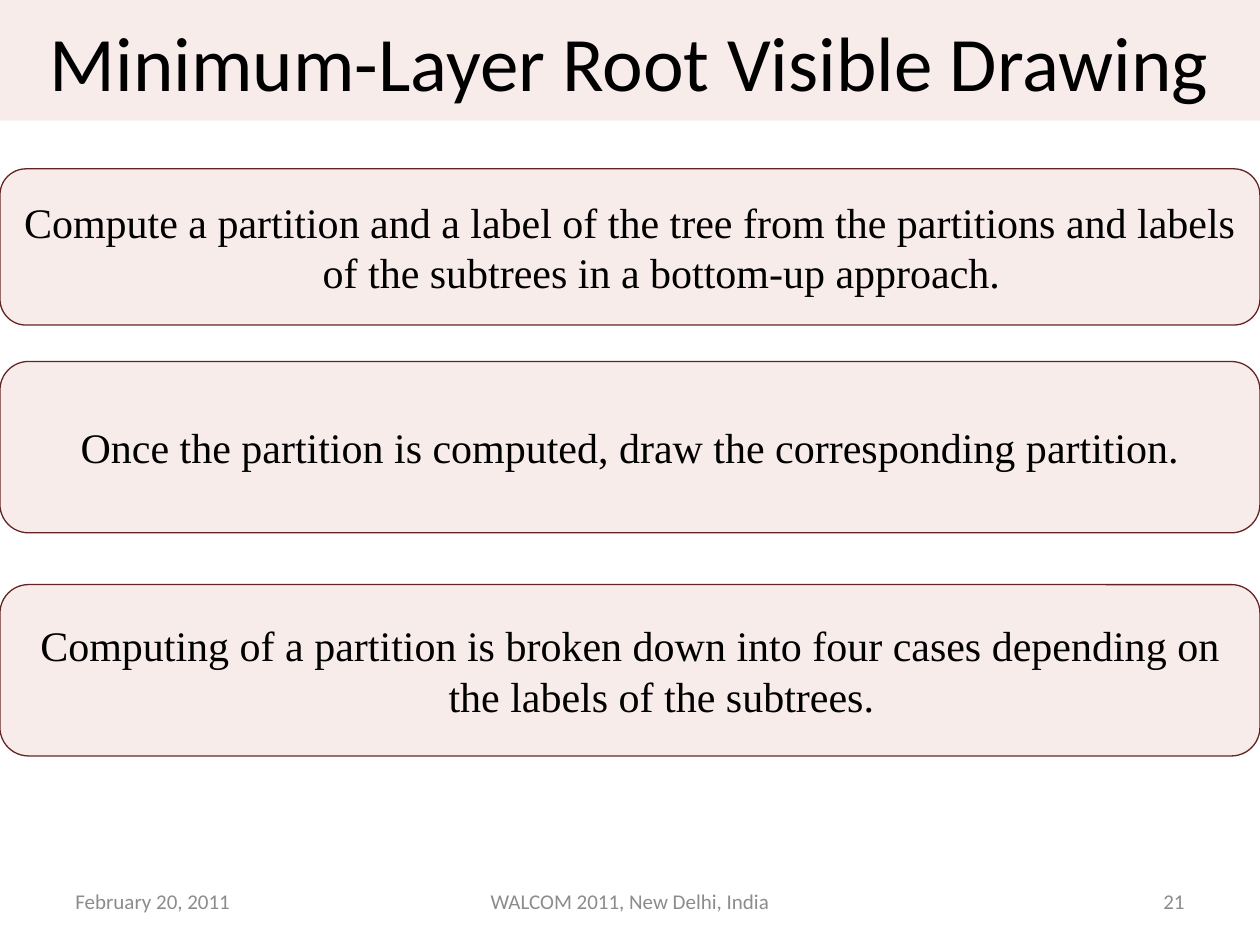
from dataclasses import dataclass

from lxml import etree
from pptx import Presentation
from pptx.dml.color import RGBColor
from pptx.enum.shapes import MSO_SHAPE
from pptx.enum.text import MSO_ANCHOR, PP_ALIGN
from pptx.oxml.ns import qn
from pptx.util import Pt

RECT, ROUND = MSO_SHAPE.RECTANGLE, MSO_SHAPE.ROUNDED_RECTANGLE
LEFT, MID, RIGHT = PP_ALIGN.LEFT, PP_ALIGN.CENTER, PP_ALIGN.RIGHT
CENTRE = MSO_ANCHOR.MIDDLE
COLOURS = {"panel": "E6B9B8", "edge": "632523", "ink": "000000", "foot": "8C8C8C"}
WIDE, HIGH = 720, 540
OPAQUE = 27
HANG = 36


@dataclass
class Panel:
    top: float
    high: float
    text: str


@dataclass
class Foot:
    left: float
    wide: float
    align: PP_ALIGN
    text: str


PANELS = [
    Panel(96.5, 89.3, "Compute a partition and a label of the tree from the partitions "
          "and labels of the subtrees in a bottom-up approach."),
    Panel(206.6, 97.9, "Once the partition is computed, draw the corresponding partition."),
    Panel(334.1, 97.9, "Computing of a partition is broken down into four cases depending "
          "on the labels of the subtrees."),
]
FEET = [
    Foot(36, 168, LEFT, "February 20, 2011"),
    Foot(246, 228, MID, "WALCOM 2011, New Delhi, India"),
    Foot(516, 168, RIGHT, "21"),
]


def tint(name: str) -> RGBColor:
    return RGBColor.from_string(COLOURS[name])


def write(shape, text: str, *, size: float, font: str = "Calibri",
          ink: str = "ink", align: PP_ALIGN = MID, hang: float = 0) -> None:
    frame = shape.text_frame
    frame.word_wrap = True
    frame.vertical_anchor = CENTRE
    para = frame.paragraphs[0]
    para.alignment = align
    if hang:
        props = para._p.get_or_add_pPr()
        props.set("marL", str(Pt(hang)))
        props.set("indent", str(-Pt(hang)))
    run = para.add_run()
    run.text = text
    run.font.name = font
    run.font.size = Pt(size)
    run.font.color.rgb = tint(ink)


def add_box(slide, kind: MSO_SHAPE, top: float, high: float, edge: str = ""):
    box = slide.shapes.add_shape(kind, Pt(0), Pt(top), Pt(WIDE), Pt(high))
    box.shadow.inherit = False
    box.fill.solid()
    box.fill.fore_color.rgb = tint("panel")
    shade = box._element.spPr.find(qn("a:solidFill"))[0]
    etree.SubElement(shade, qn("a:alpha")).set("val", str(OPAQUE * 1000))
    if edge:
        box.line.color.rgb = tint(edge)
        box.line.width = Pt(0.75)
    else:
        box.line.fill.background()
    return box


def add_foot(slide, foot: Foot) -> None:
    box = slide.shapes.add_textbox(Pt(foot.left), Pt(500.5), Pt(foot.wide), Pt(28.75))
    write(box, foot.text, size=12, ink="foot", align=foot.align)


def main() -> None:
    """Build the slide on minimum-layer root visible drawing."""
    deck = Presentation()
    deck.slide_width, deck.slide_height = Pt(WIDE), Pt(HIGH)
    slide = deck.slides.add_slide(deck.slide_layouts[6])
    for foot in FEET:
        add_foot(slide, foot)
    title = add_box(slide, RECT, 0, 69)
    write(title, "Minimum-Layer Root Visible Drawing", size=44)
    for panel in PANELS:
        box = add_box(slide, ROUND, panel.top, panel.high, "edge")
        write(box, panel.text, size=24, font="Times New Roman", hang=HANG)
    deck.save("out.pptx")


if __name__ == "__main__":
    main()
